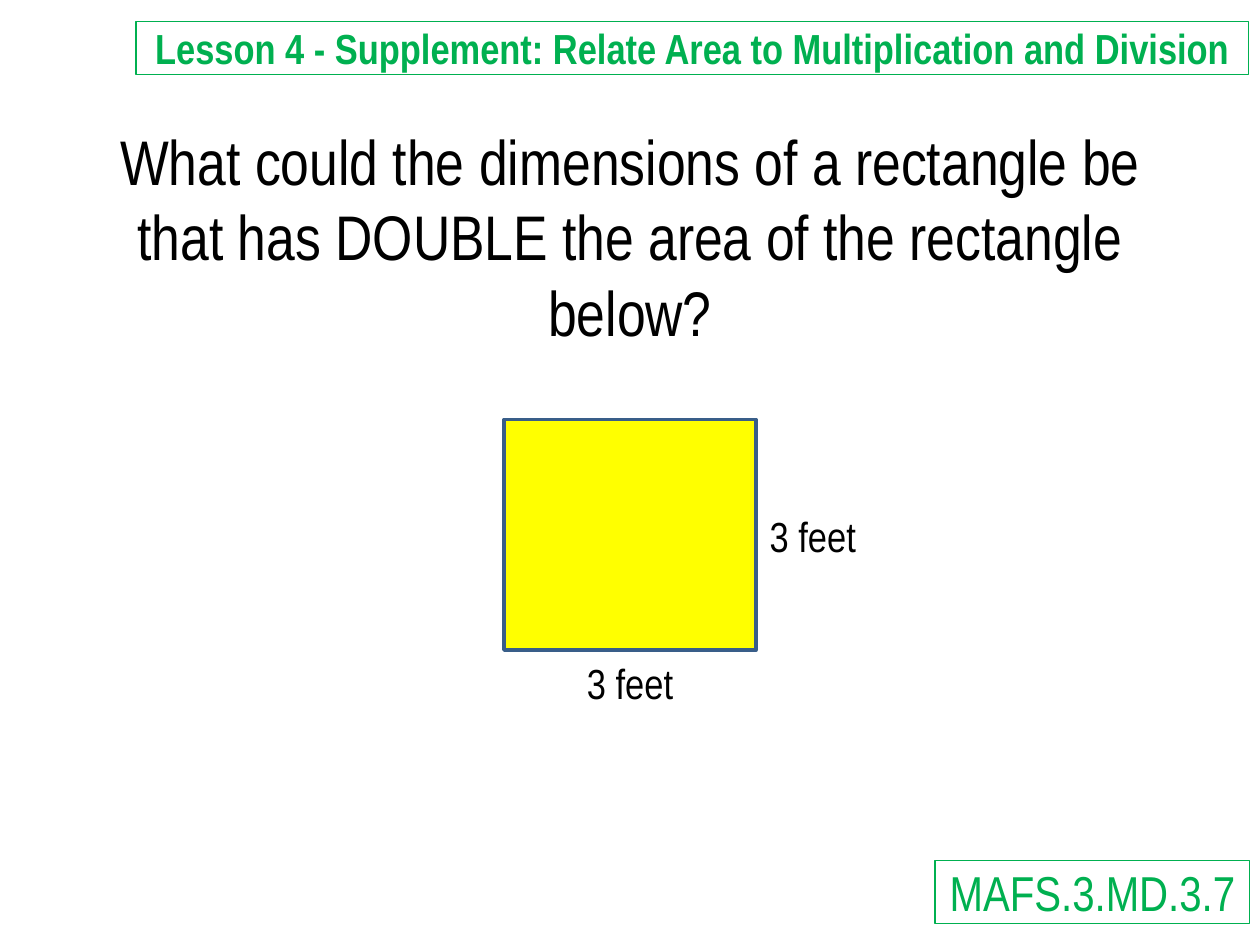
from dataclasses import dataclass
from typing import Optional

from pptx import Presentation
from pptx.dml.color import RGBColor
from pptx.enum import shapes, text
from pptx.util import Inches, Pt

COLORS = {"green": "00B050", "black": "000000", "yellow": "FFFF00", "blue": "395E89"}
FONT = "Arial Narrow"


@dataclass
class Label:
    words: str
    left: float
    top: float
    width: float
    height: float
    size: int
    color: str = "black"
    bold: bool = False
    centered: bool = True
    border: Optional[str] = None


LABELS = [
    Label("Lesson 4 - Supplement: Relate Area to Multiplication and Division",
          1.08, 0.17, 8.83, 0.42, 24, "green", bold=True, border="green"),
    Label("What could the dimensions of a rectangle be that has DOUBLE "
          "the area of the rectangle below?", 0.5, 0.92, 9, 6.42, 36),
    Label("MAFS.3.MD.3.7", 7.42, 6.83, 2.5, 0.5, 28, "green", border="green"),
    Label("3 feet", 6.01, 4, 1.58, 0.5, 24, centered=False),
    Label("3 feet", 4.21, 5.17, 1.58, 0.5, 24),
]


def rgb(name: str) -> RGBColor:
    return RGBColor.from_string(COLORS[name])


def add_label(page, label: Label) -> None:
    box = page.shapes.add_textbox(Inches(label.left), Inches(label.top),
                                  Inches(label.width), Inches(label.height))
    frame = box.text_frame
    frame.word_wrap = True
    frame.text = label.words
    if label.border:
        box.line.color.rgb = rgb(label.border)
        box.line.width = Pt(0.75)
        frame.vertical_anchor = text.MSO_ANCHOR.MIDDLE
    para = frame.paragraphs[0]
    para.alignment = text.PP_ALIGN.CENTER if label.centered else text.PP_ALIGN.LEFT
    span = para.runs[0]
    span.font.name = FONT
    span.font.size = Pt(label.size)
    span.font.bold = label.bold
    span.font.color.rgb = rgb(label.color)


def add_rectangle(page) -> None:
    rectangle = page.shapes.add_shape(shapes.MSO_SHAPE.RECTANGLE, Inches(4),
                                      Inches(3.33), Inches(2), Inches(1.83))
    rectangle.shadow.inherit = False
    rectangle.fill.solid()
    rectangle.fill.fore_color.rgb = rgb("yellow")
    rectangle.line.color.rgb = rgb("blue")
    rectangle.line.width = Pt(2)


def main() -> None:
    deck = Presentation()
    deck.slide_width = Inches(10)
    deck.slide_height = Inches(7.5)
    page = deck.slides.add_slide(deck.slide_layouts[6])
    for label in LABELS[:3]:
        add_label(page, label)
    add_rectangle(page)
    for label in LABELS[3:]:
        add_label(page, label)
    deck.save("out.pptx")


if __name__ == "__main__":
    main()
